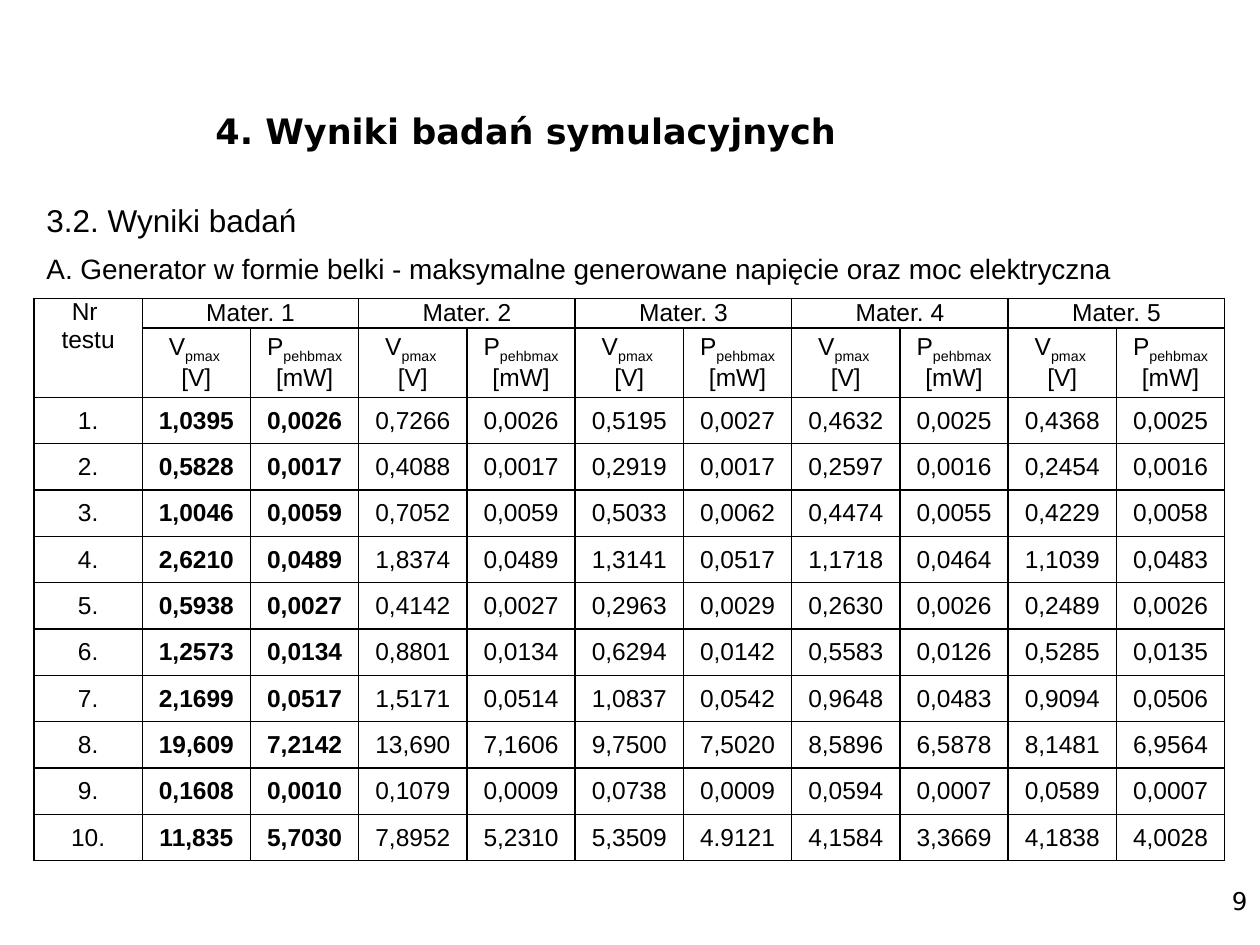
from lxml import etree
from pptx import Presentation
from pptx.dml.color import RGBColor
from pptx.enum.text import MSO_ANCHOR, PP_ALIGN
from pptx.oxml.ns import qn
from pptx.util import Inches, Pt

LEFT, CENTER, RIGHT = PP_ALIGN.LEFT, PP_ALIGN.CENTER, PP_ALIGN.RIGHT
TOP, MIDDLE = MSO_ANCHOR.TOP, MSO_ANCHOR.MIDDLE
COLUMNS, ROWS = 100, 75
SLIDE_WIDTH, SLIDE_HEIGHT = Inches(10), Inches(7.5)
BLACK = "000000"
BODY_FONT, TITLE_FONT = "Arial", "DejaVu Sans"
SUBSCRIPT = "-25000"
HEADER_ROW, UNIT_ROW, RESULT_ROW = 2.3, 5.5, 3.68

MATERIALS = ["Mater. 1", "Mater. 2", "Mater. 3", "Mater. 4", "Mater. 5"]
VOLTAGE = [[("V", False), ("pmax ", True)], [("[V]", False)]]
POWER = [[("P", False), ("pehbmax", True), (" [mW]", False)]]
RESULTS = """
1,0395 0,0026 0,7266 0,0026 0,5195 0,0027 0,4632 0,0025 0,4368 0,0025
0,5828 0,0017 0,4088 0,0017 0,2919 0,0017 0,2597 0,0016 0,2454 0,0016
1,0046 0,0059 0,7052 0,0059 0,5033 0,0062 0,4474 0,0055 0,4229 0,0058
2,6210 0,0489 1,8374 0,0489 1,3141 0,0517 1,1718 0,0464 1,1039 0,0483
0,5938 0,0027 0,4142 0,0027 0,2963 0,0029 0,2630 0,0026 0,2489 0,0026
1,2573 0,0134 0,8801 0,0134 0,6294 0,0142 0,5583 0,0126 0,5285 0,0135
2,1699 0,0517 1,5171 0,0514 1,0837 0,0542 0,9648 0,0483 0,9094 0,0506
19,609 7,2142 13,690 7,1606 9,7500 7,5020 8,5896 6,5878 8,1481 6,9564
0,1608 0,0010 0,1079 0,0009 0,0738 0,0009 0,0594 0,0007 0,0589 0,0007
11,835 5,7030 7,8952 5,2310 5,3509 4.9121 4,1584 3,3669 4,1838 4,0028
"""


def color(hex_value):
    """Turn a hex string into a colour."""
    return RGBColor.from_string(hex_value)


def across(columns):
    """Convert grid columns to a length."""
    return round(SLIDE_WIDTH * columns / COLUMNS)


def down(rows):
    """Convert grid rows to a length."""
    return round(SLIDE_HEIGHT * rows / ROWS)


def grid_box(left, top, width, height):
    """Convert a box in grid units to lengths."""
    return across(left), down(top), across(width), down(height)


def add_run(paragraph, text, size, font=BODY_FONT, bold=False, subscript=False):
    """Add one formatted run to a paragraph."""
    run = paragraph.add_run()
    run.text = text
    run.font.size = Pt(size)
    run.font.name = font
    run.font.bold = bold
    run.font.color.rgb = color(BLACK)
    if subscript:
        run.font._element.set("baseline", SUBSCRIPT)


def place_title(slide, box, text):
    """Move the title placeholder into its box and fill it."""
    title = slide.shapes.title
    title.left, title.top, title.width, title.height = box
    title.text_frame.vertical_anchor = MIDDLE
    heading = title.text_frame.paragraphs[0]
    heading.alignment = LEFT
    add_run(heading, text, 20, TITLE_FONT, bold=True)


def place_line(slide, box, text, size, font=BODY_FONT, alignment=LEFT):
    """Place a single line of text in a box."""
    frame = slide.shapes.add_textbox(*box).text_frame
    frame.word_wrap = True
    line = frame.paragraphs[0]
    line.alignment = alignment
    add_run(line, text, size, font)


def outline_cell(cell):
    """Draw a thin black border on all sides of a cell."""
    properties = cell._tc.get_or_add_tcPr()
    for side in ("a:lnL", "a:lnR", "a:lnT", "a:lnB"):
        border = etree.SubElement(properties, qn(side), w=str(Pt(1)))
        solid = etree.SubElement(border, qn("a:solidFill"))
        etree.SubElement(solid, qn("a:srgbClr"), val=BLACK)


def fill_cell(cell, lines, bold=False, anchor=MIDDLE):
    """Write centred lines of (text, subscript) runs into a cell."""
    cell.vertical_anchor = anchor
    frame = cell.text_frame
    for index, line in enumerate(lines):
        paragraph = frame.add_paragraph() if index else frame.paragraphs[0]
        paragraph.alignment = CENTER
        for text, subscript in line:
            add_run(paragraph, text, 14, bold=bold, subscript=subscript)


def place_results(slide, box):
    """Place the table of voltage and power for each material."""
    results = [line.split() for line in RESULTS.strip().splitlines()]
    heights = [HEADER_ROW, UNIT_ROW] + [RESULT_ROW] * len(results)
    column_count = 1 + 2 * len(MATERIALS)
    table = slide.shapes.add_table(len(heights), column_count, *box).table
    table.first_row = table.horz_banding = False
    for row, height in zip(table.rows, heights):
        row.height = down(height)
    for column in table.columns:
        column.width = round(box[2] / column_count)
    for cell in table.iter_cells():
        cell.margin_left = cell.margin_right = 0
        cell.margin_top = cell.margin_bottom = 0
        outline_cell(cell)
        cell.fill.background()

    table.cell(0, 0).merge(table.cell(1, 0))
    fill_cell(table.cell(0, 0), [[("Nr ", False)], [("testu", False)]], anchor=TOP)
    for index, material in enumerate(MATERIALS):
        first = 1 + 2 * index
        table.cell(0, first).merge(table.cell(0, first + 1))
        fill_cell(table.cell(0, first), [[(material, False)]])
        fill_cell(table.cell(1, first), VOLTAGE)
        fill_cell(table.cell(1, first + 1), POWER)
    for number, values in enumerate(results, 1):
        for column, text in enumerate([f"{number}."] + values):
            fill_cell(table.cell(number + 1, column), [[(text, False)]],
                      bold=column in (1, 2))


def main():
    """Build the slide and save it."""
    deck = Presentation()
    deck.slide_width, deck.slide_height = SLIDE_WIDTH, SLIDE_HEIGHT
    slide = deck.slides.add_slide(deck.slide_layouts[5])
    place_line(slide, grid_box(76.7, 69.8, 23.3, 5.2), "9", 14, TITLE_FONT, RIGHT)
    place_title(slide, grid_box(16.1, 5.2, 78.9, 10.3), "4. Wyniki badań symulacyjnych")
    place_line(slide, grid_box(2.7, 15.5, 94.5, 4), "3.2. Wyniki badań", 18)
    place_results(slide, grid_box(2.7, 23.7, 94.5, 44.6))
    place_line(
        slide, grid_box(2.7, 19.5, 94.5, 3.7),
        "A. Generator w formie belki - maksymalne generowane napięcie oraz moc elektryczna", 16)
    deck.save("out.pptx")


if __name__ == "__main__":
    main()
